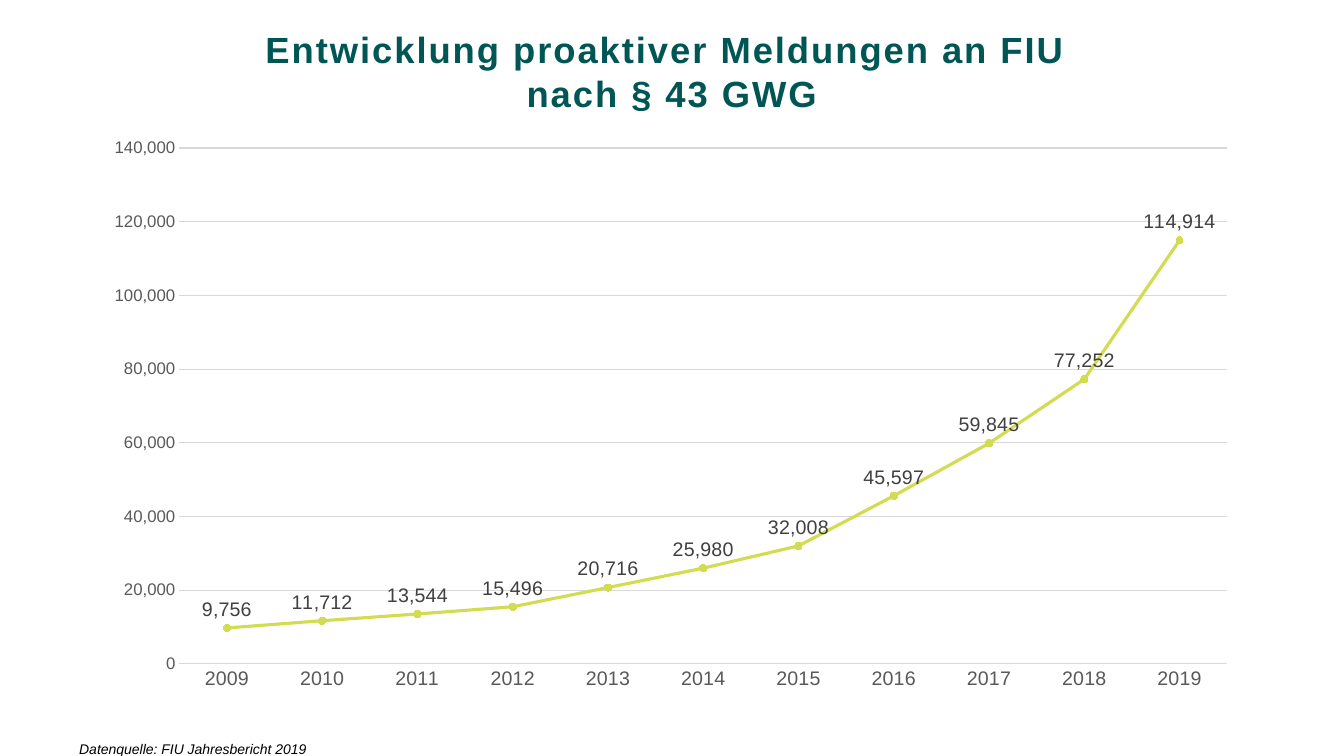
import pptx
import pptx.chart.data
import pptx.dml.color
import pptx.enum.chart
import pptx.enum.text
import pptx.oxml
import pptx.oxml.ns
import pptx.util

Pt = pptx.util.Pt
RGB = pptx.dml.color.RGBColor
qn = pptx.oxml.ns.qn

FONT = "Arial"
TEAL = RGB(0x00, 0x55, 0x55)
LIME = RGB(0xD2, 0xDC, 0x51)
BLACK = RGB(0x00, 0x00, 0x00)
DARK = RGB(0x40, 0x40, 0x40)
GREY = RGB(0x59, 0x59, 0x59)
PALE = RGB(0xD9, 0xD9, 0xD9)

YEARS = [str(year) for year in range(2009, 2020)]
COUNTS = [9756, 11712, 13544, 15496, 20716, 25980,
          32008, 45597, 59845, 77252, 114914]
# Share of the chart frame taken by the inner plot
PLOT = {"x": 0.075, "y": 0.036, "w": 0.904, "h": 0.9}


def style(font, size, color):
    font.name = FONT
    font.size = Pt(size)
    font.color.rgb = color


def place(shape, left, top, width, height):
    shape.left, shape.top = Pt(left), Pt(top)
    shape.width, shape.height = Pt(width), Pt(height)


def add_run(para, text, size, color):
    run = para.add_run()
    run.text = text
    style(run.font, size, color)
    return run


def add_title(slide, lines):
    title = slide.shapes.title
    place(title, 66, 19.5, 828, 104.5)
    frame = title.text_frame
    frame.margin_left = frame.margin_right = 0
    frame.margin_top = frame.margin_bottom = 0
    frame.word_wrap = True
    frame.auto_size = pptx.enum.text.MSO_AUTO_SIZE.NONE
    frame.vertical_anchor = pptx.enum.text.MSO_ANCHOR.TOP
    para = frame.paragraphs[0]
    para.alignment = pptx.enum.text.PP_ALIGN.CENTER
    para.line_spacing = 1.0
    para.space_after = Pt(18)
    for index, line in enumerate(lines):
        if index:
            para.add_line_break()
        run = add_run(para, line, 26, TEAL)
        run.font.bold = True
        run._r.get_or_add_rPr().set("spc", "140")


def set_plot(chart):
    area = chart._chartSpace.chart.plotArea
    for old in area.findall(qn("c:layout")):
        area.remove(old)
    parts = "".join(f'<c:{key} val="{val}"/>' for key, val in PLOT.items())
    area.insert(0, pptx.oxml.parse_xml(
        f'<c:layout {pptx.oxml.ns.nsdecls("c")}><c:manualLayout>'
        '<c:layoutTarget val="inner"/><c:xMode val="edge"/>'
        f'<c:yMode val="edge"/>{parts}</c:manualLayout></c:layout>'))


def set_line(line, color, width):
    line.color.rgb = color
    line.width = Pt(width)


def set_axis(axis, size):
    axis.major_tick_mark = pptx.enum.chart.XL_TICK_MARK.NONE
    axis.minor_tick_mark = pptx.enum.chart.XL_TICK_MARK.NONE
    style(axis.tick_labels.font, size, GREY)


def set_series(series):
    series.smooth = False
    set_line(series.format.line, LIME, 2.25)
    mark = series.marker
    mark.style = pptx.enum.chart.XL_MARKER_STYLE.CIRCLE
    mark.size = 5
    mark.format.fill.solid()
    mark.format.fill.fore_color.rgb = LIME
    set_line(mark.format.line, LIME, 0.75)
    labels = series.data_labels
    labels.show_value = True
    labels.position = pptx.enum.chart.XL_LABEL_POSITION.ABOVE
    style(labels.font, 14, DARK)


def add_chart(slide):
    data = pptx.chart.data.CategoryChartData(number_format="#,##0")
    data.categories = YEARS
    data.add_series("Series 1", COUNTS)
    chart = slide.shapes.add_chart(
        pptx.enum.chart.XL_CHART_TYPE.LINE_MARKERS,
        Pt(66), Pt(91), Pt(828), Pt(409.5), data).chart
    chart.has_title = False
    chart.has_legend = False
    style(chart.font, 10, BLACK)
    chart.plots[0].vary_by_categories = False
    set_plot(chart)

    # Axes
    years, counts = chart.category_axis, chart.value_axis
    set_axis(years, 14)
    set_line(years.format.line, PALE, 0.75)
    set_axis(counts, 12)
    counts.format.line.fill.background()
    counts.minimum_scale, counts.maximum_scale = 0, 140000
    counts.major_unit = 20000
    counts.has_major_gridlines = True
    set_line(counts.major_gridlines.format.line, PALE, 0.75)
    counts.tick_labels.number_format = "#,##0"
    counts.tick_labels.number_format_is_linked = False

    set_series(chart.plots[0].series[0])


def add_note(slide, text):
    box = slide.shapes.add_textbox(Pt(49.5), Pt(525.5), Pt(811), Pt(14.5))
    box.text_frame.word_wrap = True
    run = add_run(box.text_frame.paragraphs[0], text, 10, BLACK)
    run.font.italic = True


def main():
    deck = pptx.Presentation()
    deck.slide_width, deck.slide_height = Pt(960), Pt(540)
    slide = deck.slides.add_slide(deck.slide_layouts.get_by_name("Title Only"))
    add_title(slide, ["Entwicklung proaktiver Meldungen an FIU ",
                      "nach § 43 GWG"])
    add_chart(slide)
    add_note(slide, "Datenquelle: FIU Jahresbericht 2019")
    deck.save("out.pptx")


if __name__ == "__main__":
    main()
